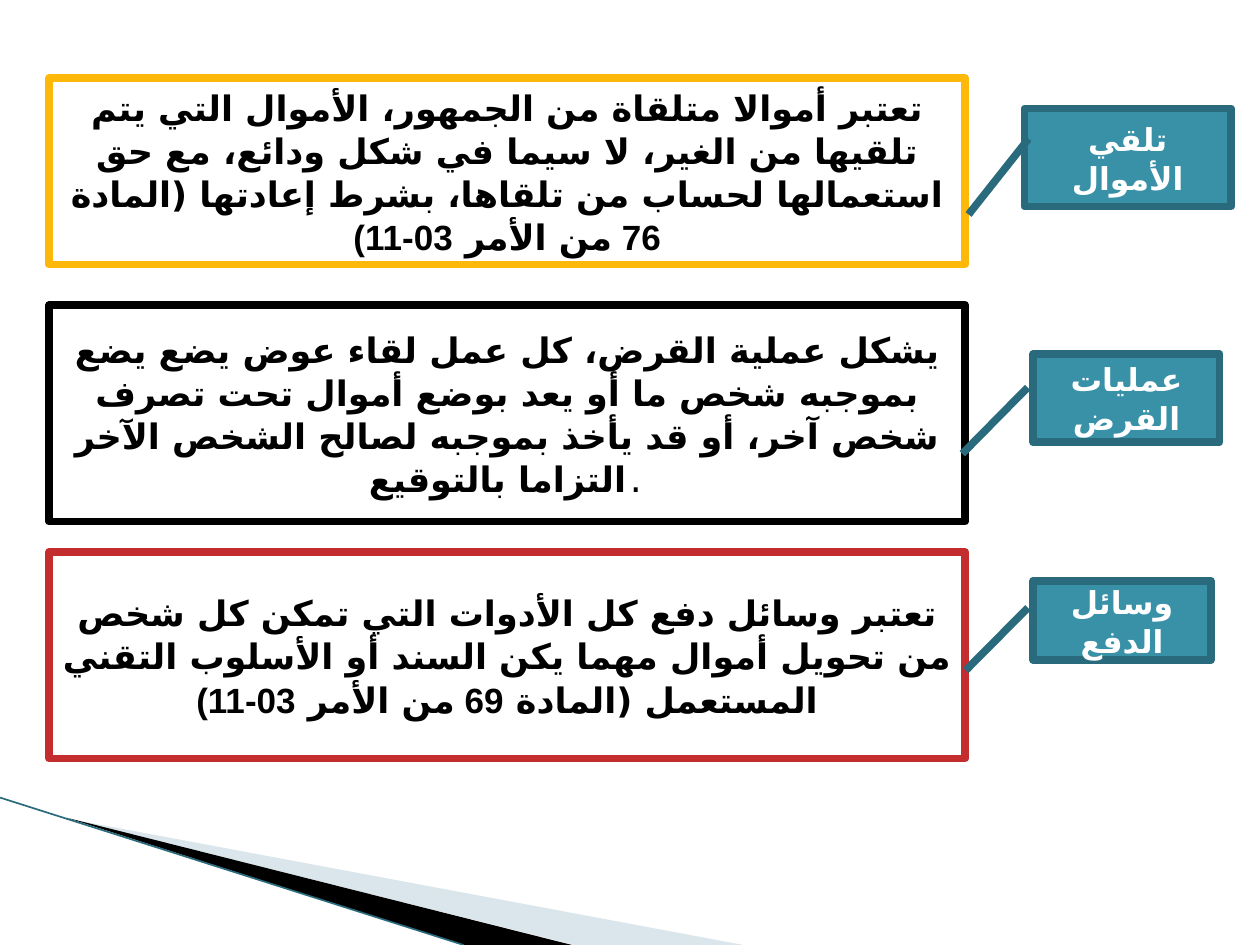
from dataclasses import dataclass

from lxml import etree
from pptx import Presentation
from pptx.dml.color import RGBColor
from pptx.enum import shapes, text
from pptx.oxml.ns import qn
from pptx.util import Inches, Pt

WHITE = RGBColor(0xFF, 0xFF, 0xFF)
BLACK = RGBColor(0x00, 0x00, 0x00)
GOLD = RGBColor(0xFE, 0xB8, 0x0A)
RED = RGBColor(0xC3, 0x2D, 0x2E)
TEAL = RGBColor(0x38, 0x91, 0xA7)
DARK_TEAL = RGBColor(0x29, 0x6B, 0x7C)
PALE_TEAL = RGBColor(0xA3, 0xC2, 0xCE)

MONO = "DejaVu Sans Mono"
CONDENSED = "Roboto Condensed"
ARABIC = "DejaVu Sans"
DIGITS = "Liberation Sans"
BOX_LEFT, BOX_WIDTH = 0.39, 7.27


@dataclass
class Run:
    text: str
    size: float = 20
    name: str = MONO
    bold: bool = True
    script_font: str = ARABIC


@dataclass
class Definition:
    top: float
    height: float
    color: RGBColor
    runs: list[Run]
    rtl: bool = True


@dataclass
class Label:
    left: float
    top: float
    width: float
    height: float
    text: str
    adjustments: tuple[float, ...]


DEFINITIONS = [
    Definition(0.62, 1.48, GOLD, [
        Run("تعتبر أموالا متلقاة من الجمهور، الأموال التي يتم تلقيها من الغير، "
            "لا سيما في شكل ودائع، مع حق استعمالها لحساب من تلقاها، "
            "بشرط إعادتها (المادة "),
        Run("76 ", script_font=DIGITS),
        Run("من الأمر ", name=CONDENSED),
        Run("03-11)", name=CONDENSED, script_font=DIGITS),
    ]),
    Definition(2.42, 1.72, BLACK, [
        Run("يشكل عملية القرض، كل عمل لقاء عوض يضع يضع بموجبه شخص ما "
            "أو يعد بوضع أموال تحت تصرف شخص آخر، أو قد يأخذ بموجبه "
            "لصالح الشخص الآخر التزاما بالتوقيع"),
        Run(".", size=18, bold=False),
    ], rtl=False),
    Definition(4.38, 1.64, RED, [
        Run("تعتبر وسائل دفع كل الأدوات التي تمكن كل شخص من تحويل أموال "
            "مهما يكن السند أو الأسلوب التقني المستعمل (المادة "),
        Run("69 ", script_font=DIGITS),
        Run("من الأمر "),
        Run("03-11)", script_font=DIGITS),
    ]),
]

LABELS = [
    Label(8.13, 0.86, 1.64, 0.78, "تلقي الأموال", (0.31, 0.02, 1.08, -0.27)),
    Label(8.2, 2.81, 1.48, 0.7, "عمليات القرض", (0.38, -0.03, 1.13, -0.38)),
    Label(8.2, 4.61, 1.41, 0.63, "وسائل الدفع", (0.34, -0.03, 1.13, -0.38)),
]


def style_shape(sp, fill: RGBColor, line: RGBColor) -> None:
    sp.shadow.inherit = False
    sp.fill.solid()
    sp.fill.fore_color.rgb = fill
    sp.line.color.rgb = line
    sp.line.width = Pt(4.33)


def write_runs(sp, runs: list[Run], color: RGBColor, rtl: bool = True) -> None:
    tf = sp.text_frame
    tf.word_wrap = True
    tf.vertical_anchor = text.MSO_ANCHOR.MIDDLE
    p = tf.paragraphs[0]
    p.alignment = text.PP_ALIGN.CENTER
    p.line_spacing = 1.03
    p._p.get_or_add_pPr().set("rtl", str(int(rtl)))
    for run in runs:
        r = p.add_run()
        r.text = run.text
        formats = {"size": Pt(run.size), "name": run.name, "bold": run.bold}
        for key, value in formats.items():
            setattr(r.font, key, value)
        r.font.color.rgb = color
        etree.SubElement(r._r.rPr, qn("a:cs"), typeface=run.script_font)


def add_wedge(s, points: list[tuple[float, float]], color: RGBColor):
    corners = [(Inches(x), Inches(y)) for x, y in points]
    builder = s.shapes.build_freeform(*corners[0])
    builder.add_line_segments(corners[1:], close=True)
    sp = builder.convert_to_shape()
    sp.shadow.inherit = False
    sp.fill.solid()
    sp.fill.fore_color.rgb = color
    sp.line.fill.background()
    return sp


def add_decoration(s) -> None:
    pale = add_wedge(s, [(0.55, 6.5), (5.9, 7.5), (4.56, 7.5)], PALE_TEAL)
    color = pale.fill._xPr.find(qn("a:solidFill"))[0]
    etree.SubElement(color, qn("a:alpha"), val="40000")
    add_wedge(s, [(0.53, 6.49), (4.54, 7.5), (3.68, 7.5)], BLACK)
    edge = s.shapes.add_connector(
        shapes.MSO_CONNECTOR.STRAIGHT,
        Inches(0), Inches(6.33), Inches(3.68), Inches(7.5))
    edge.line.color.rgb = DARK_TEAL
    edge.line.width = Pt(0.95)
    etree.SubElement(edge._element.spPr, qn("a:effectLst"))


def add_definition(s, item: Definition) -> None:
    sp = s.shapes.add_shape(
        shapes.MSO_SHAPE.RECTANGLE, Inches(BOX_LEFT), Inches(item.top),
        Inches(BOX_WIDTH), Inches(item.height))
    style_shape(sp, WHITE, item.color)
    write_runs(sp, item.runs, BLACK, item.rtl)


def add_label(s, item: Label) -> None:
    sp = s.shapes.add_shape(
        shapes.MSO_SHAPE.LINE_CALLOUT_1, Inches(item.left), Inches(item.top),
        Inches(item.width), Inches(item.height))
    for i, value in enumerate(item.adjustments):
        sp.adjustments[i] = value
    style_shape(sp, TEAL, DARK_TEAL)
    write_runs(sp, [Run(item.text, size=18)], WHITE)


def main() -> None:
    prs = Presentation()
    prs.slide_width, prs.slide_height = Inches(10), Inches(7.5)
    s = prs.slides.add_slide(prs.slide_layouts[6])
    add_decoration(s)
    for definition in DEFINITIONS:
        add_definition(s, definition)
    for label in LABELS:
        add_label(s, label)
    prs.save("out.pptx")


if __name__ == "__main__":
    main()
